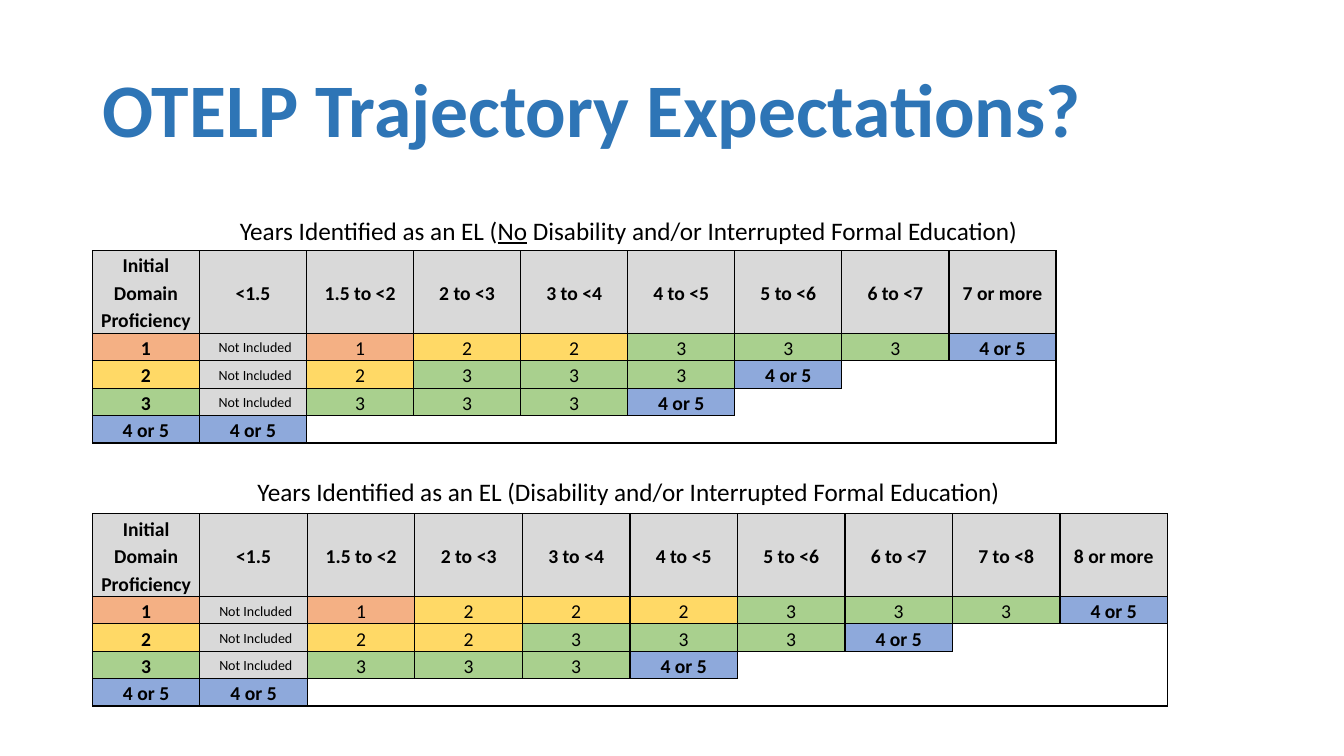
"""Builds the slide of trajectory expectations with its two step tables."""
from lxml.etree import SubElement as Sub
from pptx import Presentation
from pptx.dml.color import RGBColor as RGB
from pptx.enum.text import MSO_ANCHOR as Anchor, PP_ALIGN as Align
from pptx.oxml.ns import qn
from pptx.util import Pt

TITLE = "OTELP Trajectory Expectations?"
CORNER = "Initial\nDomain\nProficiency"
SKIP = "Not Included"
TOP = "4 or 5"
SPANS = ["<1.5", "1.5 to <2", "2 to <3", "3 to <4", "4 to <5", "5 to <6", "6 to <7"]
PARTS = [
    {
        "head": [("Years Identified as an EL (", False), ("No", True),
                 (" Disability and/or Interrupted Formal Education)", False)],
        "head_y": 150, "y": 179, "col": 76.5,
        "rows": [
            [CORNER, *SPANS, "7 or more"],
            ["1", SKIP, "1", "2", "2", "3", "3", "3", TOP],
            ["2", SKIP, "2", "3", "3", "3", TOP],
            ["3", SKIP, "3", "3", "3", TOP],
            [TOP, TOP],
        ],
    },
    {
        "head": [("Years Identified as an EL (Disability and/or "
                  "Interrupted Formal Education)", False)],
        "head_y": 337, "y": 367, "col": 76.8,
        "rows": [
            [CORNER, *SPANS, "7 to <8", "8 or more"],
            ["1", SKIP, "1", "2", "2", "2", "3", "3", "3", TOP],
            ["2", SKIP, "2", "2", "3", "3", "3", TOP],
            ["3", SKIP, "3", "3", "3", TOP],
            [TOP, TOP],
        ],
    },
]
FILLS = {"1": "F4B084", "2": "FFD966", "3": "A9D08E", TOP: "8EA9DB", "": "FFFFFF"}
GREY, BLACK, BLUE = "D9D9D9", "000000", "2E75B6"
LEFT, HEAD_H, ROW_H = 66, 59, 19.6
SIDES = {"lnL": (0, -1), "lnR": (0, 1), "lnT": (-1, 0), "lnB": (1, 0)}


def color(code):
    return RGB.from_string(code)


def put(item, **values):
    for name, value in values.items():
        setattr(item, name, value)


def style(font, size, code=BLACK, **more):
    put(font, name="Calibri", size=Pt(size), **more)
    font.color.rgb = color(code)


def edge(cell, side, shown):
    line = Sub(cell._tc.get_or_add_tcPr(), qn("a:" + side), w=str(Pt(1)))
    if shown:
        Sub(Sub(line, qn("a:solidFill")), qn("a:srgbClr"), val=BLACK)
    else:
        Sub(line, qn("a:noFill"))


def fill_cell(cell, text, bold):
    small = text == SKIP
    put(cell, margin_left=Pt(8 if small else 5), margin_right=Pt(5), margin_top=0,
        margin_bottom=0, vertical_anchor=Anchor.MIDDLE, text=text)
    cell.fill.solid()
    cell.fill.fore_color.rgb = color(FILLS.get(text, GREY))
    for para in cell.text_frame.paragraphs:
        put(para, alignment=Align.CENTER, line_spacing=1.15)
        for run in para.runs:
            style(run.font, 10 if small else 14, bold=bold)
        if not text:
            para._p.get_or_add_endParaRPr().set("sz", "1000")


def add_grid(slide, part):
    rows = part["rows"]
    high, wide = len(rows), len(rows[0])
    table = slide.shapes.add_table(
        high, wide, Pt(LEFT), Pt(part["y"]), Pt(part["col"] * wide),
        Pt(HEAD_H + ROW_H * (high - 1))).table
    put(table, first_row=False, horz_banding=False)
    for col in table.columns:
        col.width = Pt(part["col"])
    for r, row in enumerate(table.rows):
        row.height = Pt(ROW_H if r else HEAD_H)

    def blank(r, c):
        return 0 <= r < high and len(rows[r]) <= c < wide

    for r in range(high):
        for c in range(wide):
            cell = table.cell(r, c)
            for side, (down, over) in SIDES.items():
                edge(cell, side, not (blank(r, c) and blank(r + down, c + over)))
            text = "" if blank(r, c) else rows[r][c]
            fill_cell(cell, text, r == 0 or c == 0 or text == TOP)


def add_head(slide, part):
    box = slide.shapes.add_textbox(Pt(143), Pt(part["head_y"]), Pt(612), Pt(29))
    box.text_frame.word_wrap = True
    para = box.text_frame.paragraphs[0]
    para.alignment = Align.CENTER
    for text, under in part["head"]:
        run = para.add_run()
        run.text = text
        style(run.font, 18, underline=under)


def main():
    deck = Presentation()
    put(deck, slide_width=Pt(960), slide_height=Pt(540))
    slide = deck.slides.add_slide(deck.slide_layouts[5])
    title = slide.shapes.title
    put(title, left=Pt(LEFT), top=Pt(29), width=Pt(828), height=Pt(104))
    put(title.text_frame, text=TITLE, vertical_anchor=Anchor.MIDDLE, word_wrap=True)
    para = title.text_frame.paragraphs[0]
    put(para, alignment=Align.LEFT, line_spacing=0.9)
    style(para.runs[0].font, 54, BLUE, bold=True)
    for part in PARTS:
        add_grid(slide, part)
        add_head(slide, part)
    deck.save("out.pptx")


if __name__ == "__main__":
    main()
